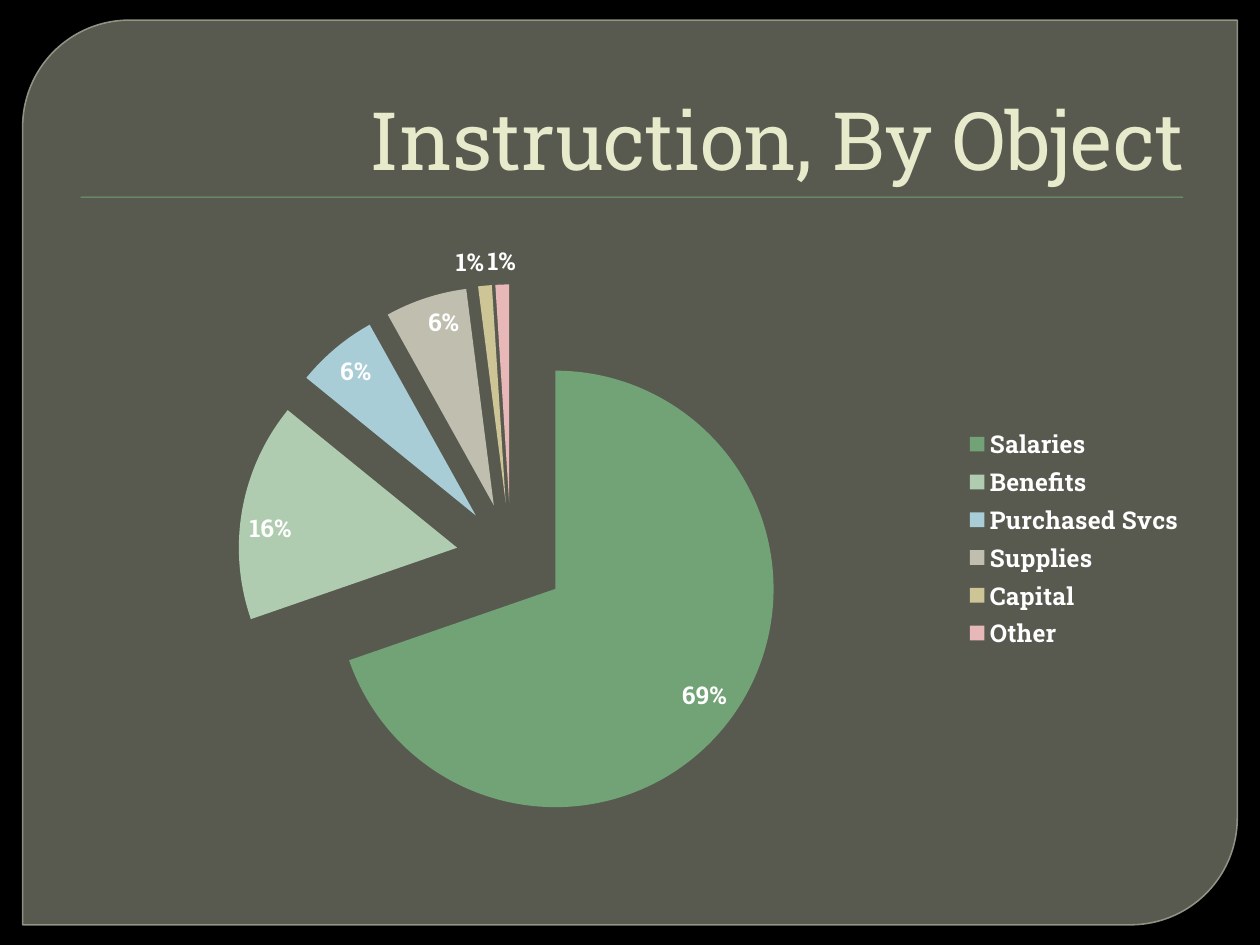
from dataclasses import dataclass

from lxml import etree
from pptx import Presentation, util as u
from pptx.chart.data import CategoryChartData
from pptx.dml.color import RGBColor
from pptx.enum import chart as charts, shapes, text
from pptx.oxml import parse_xml
from pptx.oxml.ns import nsdecls, qn

WIDTH, HEIGHT = u.Inches(10), u.Inches(7.5)
SPENDING = {"Salaries": 69, "Benefits": 16, "Purchased Svcs": 6,
            "Supplies": 6, "Capital": 1, "Other": 1}
PERCENT_FORMAT = '0"%"'


@dataclass(frozen=True)
class Theme:
    """Colours, typeface and type sizes of the slide."""
    font: str = "Roboto Slab"
    backdrop: str = "000000"
    panel: str = "888B7B"
    edge: str = "9DA090"
    accent: str = "72A376"
    heading: str = "E7EACB"
    label: str = "FFFFFF"
    slices: tuple = ("72A376", "B0CCB0", "A8CDD7", "C0BEAF", "CEC597", "E8B7B7")
    heading_size: int = 46
    label_size: int = 14


THEME = Theme()


def rgb(code):
    """Return the colour for a hex code."""
    return RGBColor.from_string(code)


def inches(left, top, width, height):
    """Turn inches on the 10 by 7.5 slide into shares of its size."""
    return (int(WIDTH * left / 10), int(HEIGHT * top / 7.5),
            int(WIDTH * width / 10), int(HEIGHT * height / 7.5))


def set_opacity(paint, percent):
    """Make a solid fill partly transparent."""
    colour = paint._xPr.find(qn("a:solidFill"))[0]
    etree.SubElement(colour, qn("a:alpha"), val=str(percent * 1000))


def add_block(slide, preset, area, colour):
    """Add a flat shape without outline."""
    block = slide.shapes.add_shape(preset, *area)
    block.shadow.inherit = False
    block.fill.solid()
    block.fill.fore_color.rgb = rgb(colour)
    block.line.fill.background()
    return block


def add_panel(slide):
    """Add the translucent panel with two rounded corners."""
    panel = add_block(slide, shapes.MSO_SHAPE.ROUND_2_DIAG_RECTANGLE,
                      inches(0.18, 0.16, 9.64, 7.18), THEME.panel)
    panel.adjustments[0] = 0.118
    panel.adjustments[1] = 0
    set_opacity(panel.fill, 65)
    panel.line.color.rgb = rgb(THEME.edge)
    panel.line.width = u.Pt(0.87)
    set_opacity(panel.line.fill, 88)


def style_font(font, size, colour, bold=False):
    """Apply the theme typeface with a size and colour."""
    font.name = THEME.font
    font.size = u.Pt(size)
    font.bold = bold
    font.color.rgb = rgb(colour)


def set_heading(slide, wording):
    """Place the title in front of the panel and write it."""
    heading = slide.shapes.title
    slide.shapes._spTree.append(heading._element)
    heading.left, heading.top, heading.width, heading.height = inches(0.5, 0.28, 9, 1.25)
    frame = heading.text_frame
    frame.auto_size = text.MSO_AUTO_SIZE.NONE
    frame.vertical_anchor = text.MSO_ANCHOR.BOTTOM
    paragraph = frame.paragraphs[0]
    paragraph.alignment = text.PP_ALIGN.RIGHT
    run = paragraph.add_run()
    run.text = wording
    style_font(run.font, THEME.heading_size, THEME.heading)


def set_plot_area(chart, **shares):
    """Fix the plot area as shares of the chart frame."""
    plot_area = chart._chartSpace.chart.plotArea
    for layout in plot_area.findall(qn("c:layout")):
        plot_area.remove(layout)
    sizes = "".join(f'<c:{key} val="{share}"/>' for key, share in shares.items())
    plot_area.insert(0, parse_xml(
        f'<c:layout {nsdecls("c")}><c:manualLayout><c:layoutTarget val="inner"/>'
        f'<c:xMode val="edge"/><c:yMode val="edge"/>{sizes}</c:manualLayout></c:layout>'))


def explode(series, percent):
    """Pull every slice out from the centre."""
    for point in series._element.findall(qn("c:dPt")):
        explosion = etree.Element(qn("c:explosion"), val=str(percent))
        point.find(qn("c:spPr")).addprevious(explosion)


def label_slices(series):
    """Label slices inside their rim, and the thin ones outside."""
    labels = series.data_labels
    labels.show_value = True
    labels.show_percentage = False
    labels.number_format = PERCENT_FORMAT
    labels.number_format_is_linked = False
    labels.position = charts.XL_LABEL_POSITION.INSIDE_END
    style_font(labels.font, THEME.label_size, THEME.label, bold=True)
    for index, share in enumerate(SPENDING.values()):
        if share < 5:
            label = series.points[index].data_label
            style_font(label.font, THEME.label_size, THEME.label, bold=True)
            label.position = charts.XL_LABEL_POSITION.OUTSIDE_END
    for entry in labels._element.findall(qn("c:dLbl")):
        number = etree.Element(qn("c:numFmt"), formatCode=PERCENT_FORMAT, sourceLinked="0")
        entry.find(qn("c:idx")).addnext(number)


def add_spending_pie(slide):
    """Add the exploded pie with its labels and legend."""
    spending = CategoryChartData()
    spending.categories = list(SPENDING)
    spending.add_series("Series 1", list(SPENDING.values()))
    chart = slide.shapes.add_chart(charts.XL_CHART_TYPE.PIE,
                                   *inches(0.5, 1.8, 9, 4.95), spending).chart
    chart.has_title = False
    style_font(chart.font, 10, THEME.label)
    set_plot_area(chart, x=0.2, y=0.18, w=0.39, h=0.7)

    pie = chart.plots[0]
    pie.vary_by_categories = True
    for index, colour in enumerate(THEME.slices):
        paint = pie.series[0].points[index].format.fill
        paint.solid()
        paint.fore_color.rgb = rgb(colour)
    explode(pie.series[0], 25)
    label_slices(pie.series[0])

    chart.has_legend = True
    chart.legend.position = charts.XL_LEGEND_POSITION.RIGHT
    chart.legend.include_in_layout = False
    style_font(chart.legend.font, THEME.label_size, THEME.label, bold=True)


def main():
    """Build and save the slide."""
    deck = Presentation()
    deck.slide_width, deck.slide_height = WIDTH, HEIGHT
    slide = deck.slides.add_slide(deck.slide_layouts[5])
    slide.background.fill.solid()
    slide.background.fill.fore_color.rgb = rgb(THEME.backdrop)
    add_panel(slide)
    add_block(slide, shapes.MSO_SHAPE.RECTANGLE, inches(0.64, 1.56, 8.75, 0.01), THEME.accent)
    set_heading(slide, "Instruction, By Object")
    add_spending_pie(slide)
    deck.save("out.pptx")


if __name__ == "__main__":
    main()
